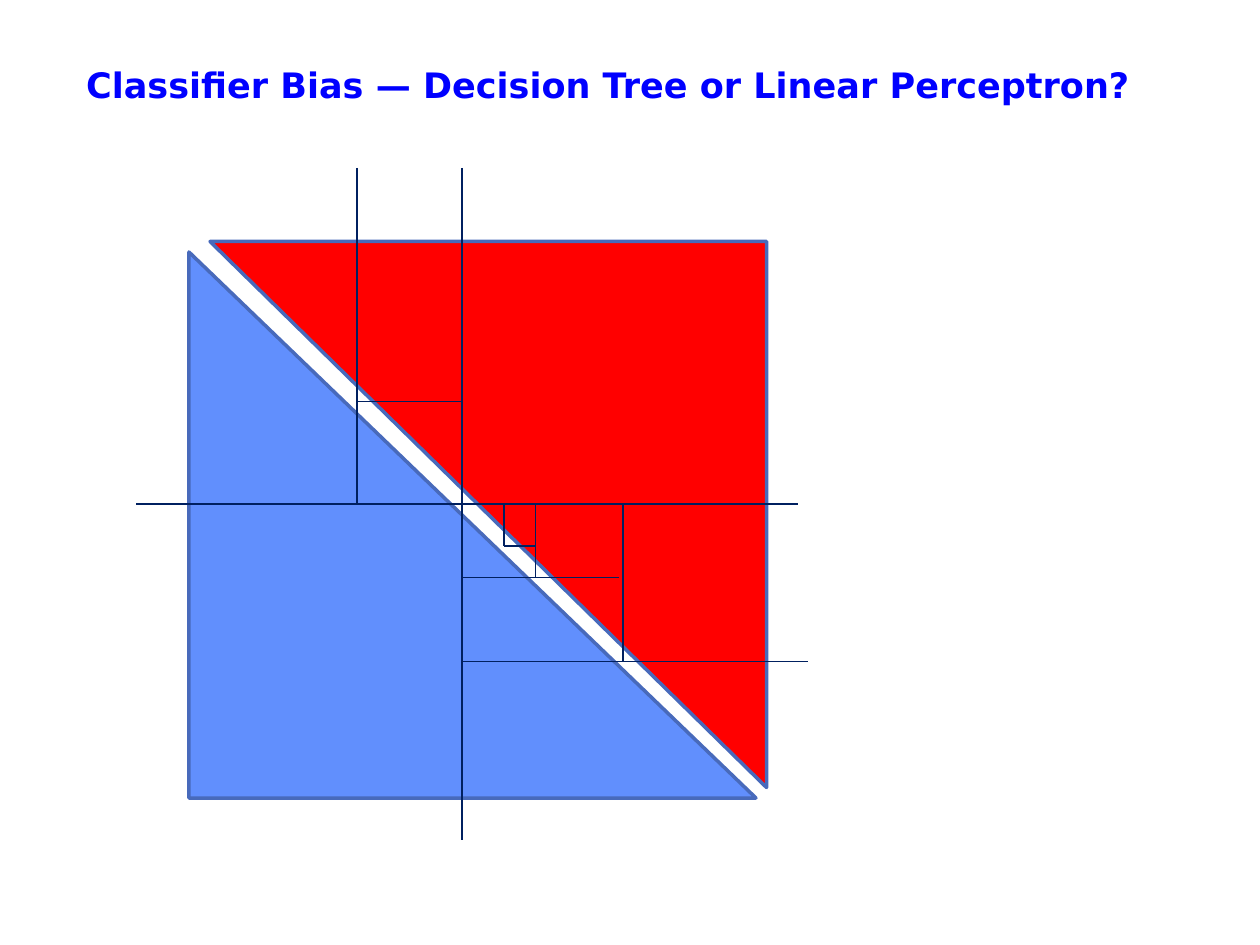
from dataclasses import dataclass

from lxml.etree import SubElement
from pptx import Presentation
from pptx.dml.color import RGBColor
from pptx.enum.shapes import MSO_CONNECTOR, MSO_SHAPE
from pptx.enum.text import MSO_ANCHOR, PP_ALIGN
from pptx.oxml.ns import qn
from pptx.util import Inches, Pt


@dataclass(frozen=True)
class Theme:
    font: str = "DejaVu Sans"
    title_size: float = 20
    title: str = "0000FF"
    lower_class: str = "618FFD"
    upper_class: str = "FF0000"
    outline: str = "486ABB"
    outline_width: float = 2
    split: str = "002060"
    split_width: float = 0.75


class SlideBuilder:
    COLUMNS, ROWS = 120, 90

    def __init__(self, deck, theme):
        self.theme = theme
        self.cell_width = deck.slide_width / self.COLUMNS
        self.cell_height = deck.slide_height / self.ROWS
        self.slide = deck.slides.add_slide(deck.slide_layouts[5])

    def place(self, column, row):
        return round(column * self.cell_width), round(row * self.cell_height)

    def title(self, wording, column, row, columns, rows):
        heading = self.slide.shapes.title
        heading.left, heading.top = self.place(column, row)
        heading.width, heading.height = self.place(columns, rows)
        frame = heading.text_frame
        frame.text = wording
        frame.vertical_anchor = MSO_ANCHOR.MIDDLE
        paragraph = frame.paragraphs[0]
        paragraph.alignment = PP_ALIGN.LEFT
        font = paragraph.runs[0].font
        font.name, font.size, font.bold = self.theme.font, Pt(self.theme.title_size), True
        font.color.rgb = RGBColor.from_string(self.theme.title)

    def region(self, column, row, columns, rows, colour, rotation=0):
        triangle = self.slide.shapes.add_shape(
            MSO_SHAPE.RIGHT_TRIANGLE, *self.place(column, row), *self.place(columns, rows)
        )
        triangle.rotation = rotation
        triangle.shadow.inherit = False
        triangle.fill.solid()
        triangle.fill.fore_color.rgb = RGBColor.from_string(colour)
        triangle.line.color.rgb = RGBColor.from_string(self.theme.outline)
        triangle.line.width = Pt(self.theme.outline_width)

    def split(self, start, end, kind=MSO_CONNECTOR.STRAIGHT):
        line = self.slide.shapes.add_connector(kind, *self.place(*start), *self.place(*end))
        line.line.color.rgb = RGBColor.from_string(self.theme.split)
        line.line.width = Pt(self.theme.split_width)
        SubElement(line._element.spPr, qn("a:effectLst"))
        return line

    def bent_split(self, start, end, bend, upright=False):
        if upright:
            middle_column, middle_row = (start[0] + end[0]) / 2, (start[1] + end[1]) / 2
            half_width, half_height = (end[1] - start[1]) / 2, (end[0] - start[0]) / 2
            start = middle_column + half_width, middle_row - half_height
            end = middle_column - half_width, middle_row + half_height
        line = self.split(start, end, MSO_CONNECTOR.ELBOW)
        properties = line._element.spPr
        if upright:
            properties.find(qn("a:xfrm")).set("rot", str(270 * 60000))
        adjustments = properties.find(qn("a:prstGeom")).find(qn("a:avLst"))
        SubElement(adjustments, qn("a:gd"), name="adj1", fmla=f"val {round(bend * 100000)}")


def main():
    deck = Presentation()
    deck.slide_width, deck.slide_height = Inches(10), Inches(7.5)
    theme = Theme()
    page = SlideBuilder(deck, theme)

    page.title("Classifier Bias — Decision Tree or Linear Perceptron?", 7, 4, 102, 8)
    page.region(18, 24, 54, 52, theme.lower_class)
    page.region(20, 23, 53, 52, theme.upper_class, rotation=180)

    root = (44, 48)
    for tip in [(44, 16), (44, 80), (76, 48), (13, 48)]:
        page.split(tip, root)

    page.bent_split((34, 23), (44, 38), 1.016, upright=True)
    page.bent_split((59, 48), (77, 63), 0.019)

    for start, end in [
        ((34, 16), (34, 48)),
        ((76, 63), (44, 63)),
        ((59, 55), (44, 55)),
        ((51, 48), (51, 55)),
        ((48, 48), (48, 52)),
        ((51, 52), (48, 52)),
    ]:
        page.split(start, end)

    deck.save("out.pptx")


if __name__ == "__main__":
    main()
